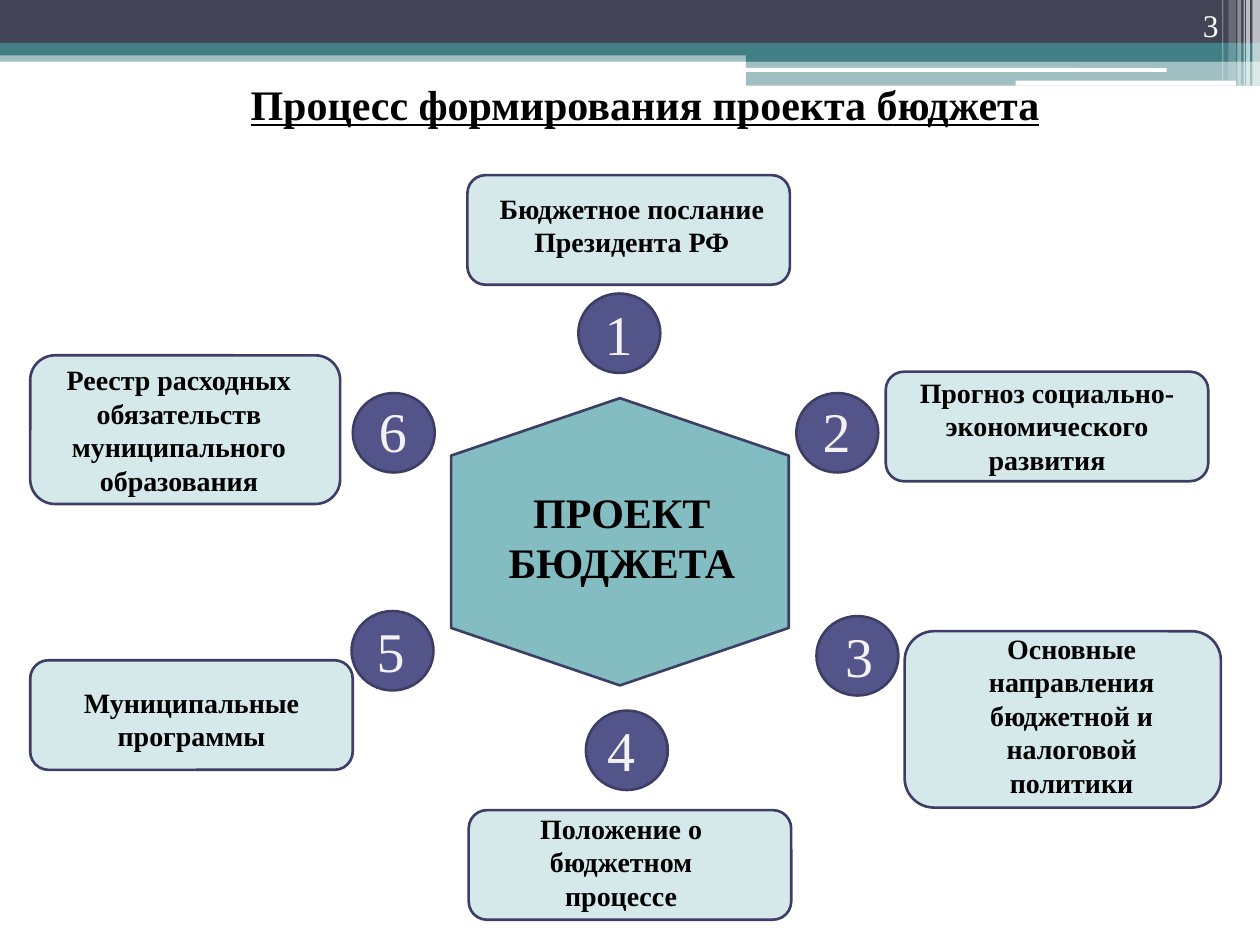
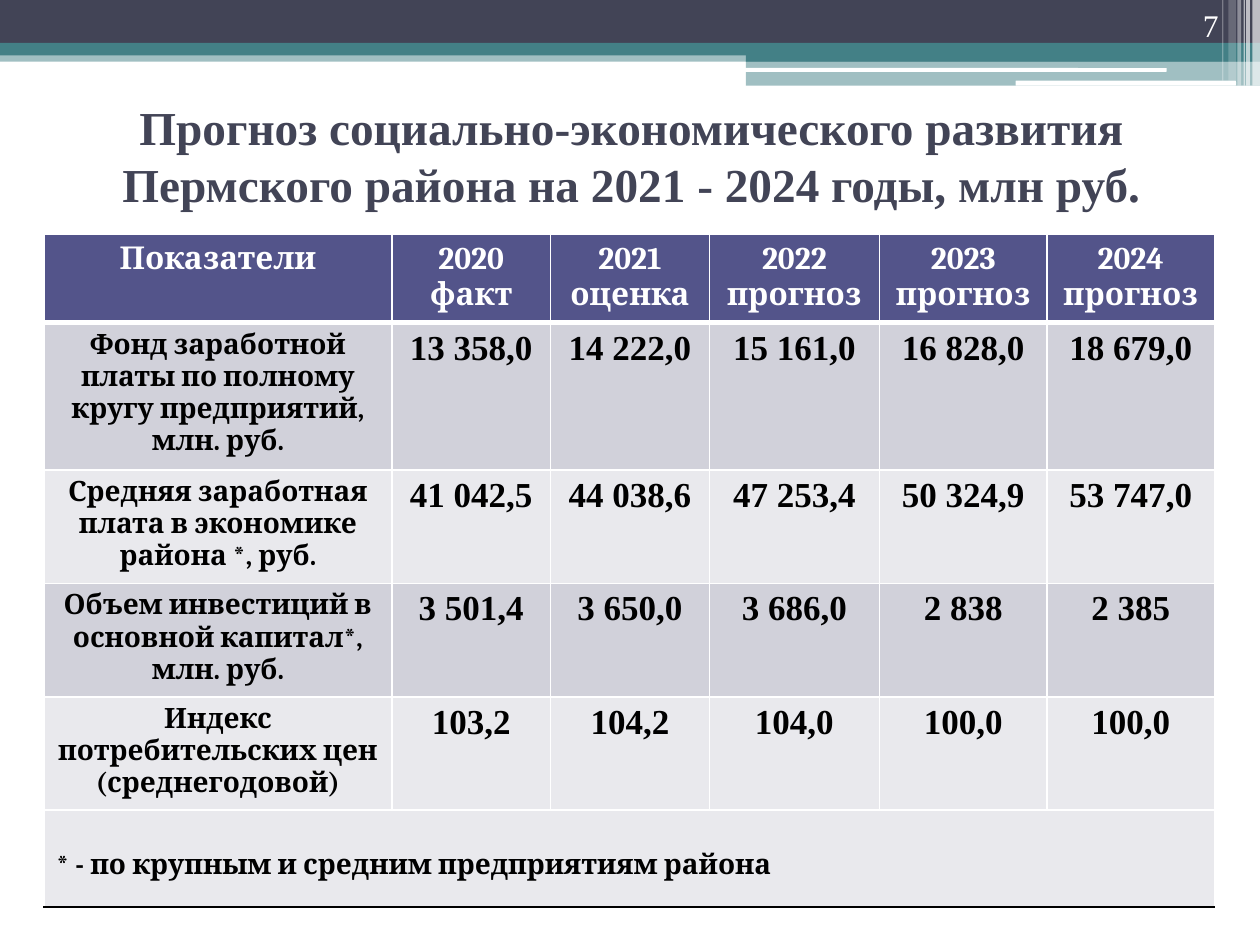
from lxml import etree
from pptx import Presentation
from pptx.dml.color import RGBColor
from pptx.enum.shapes import MSO_SHAPE
from pptx.enum.text import MSO_ANCHOR, PP_ALIGN
from pptx.oxml.ns import qn
from pptx.util import Inches, Pt

COLORS = {
    "white": "FFFFFF", "black": "000000", "slate": "424456", "teal": "438086",
    "hexagon": "83BCC1", "card": "D6E9EA", "indigo": "53548A", "outline": "3D3E66",
    "digit": "F2F2F2", "band_dark": "D1D1DA", "band_light": "E9E9ED",
}
SERIF, TABLE_FONT = "Times New Roman", "Cambria"

# left, top, width, height, colour, opacity in percent
BANDS = [
    (0, 0.4, 10, 0.09, "teal", 50),
    (0, 0, 10, 0.34, "slate", 100),
    (0, 0.34, 10, 0.1, "teal", 100),
    (5.92, 0.39, 4.08, 0.1, "teal", 100),
    (5.92, 0.48, 4.08, 0.2, "teal", 50),
]
WHITE_BARS = [(5.91, 0.54, 3.35, 0.03), (8.06, 0.64, 1.75, 0.04)]
# left, width, height, opacity in percent
STRIPES = [
    (9.94, 0.06, 0.68, 65), (9.89, 0.03, 0.68, 65), (9.87, 0.01, 0.68, 60),
    (9.82, 0.03, 0.68, 40), (9.75, 0.06, 0.64, 20), (9.7, 0.01, 0.64, 30),
]

# circle left and top, digit left and top
STEPS = [
    ("1", (4.59, 2.33), (4.7, 2.33)),
    ("2", (6.32, 3.12), (6.43, 3.1)),
    ("3", (6.48, 4.89), (6.61, 4.88)),
    ("4", (4.65, 5.64), (4.72, 5.63)),
    ("5", (2.79, 4.85), (2.89, 4.84)),
    ("6", (2.8, 3.12), (2.91, 3.1)),
]
# card frame, text frame
CARDS = [
    ("Бюджетное послание Президента РФ",
     (3.71, 1.39, 2.56, 0.87), (3.8, 1.47, 2.43, 0.64)),
    ("Прогноз социально-экономического развития",
     (7.03, 2.95, 2.56, 0.87), (7.17, 2.93, 2.28, 0.91)),
    ("Основные направления бюджетной и налоговой политики",
     (7.18, 5.01, 2.51, 1.4), (7.43, 4.96, 2.15, 1.45)),
    ("Положение о бюджетном процессе",
     (3.72, 6.43, 2.56, 0.87), (3.83, 6.39, 2.2, 0.91)),
    ("Муниципальные программы",
     (0.24, 5.24, 2.56, 0.87), (0.4, 5.39, 2.24, 0.64)),
    ("Реестр расходных обязательств муниципального образования",
     (0.24, 2.82, 2.46, 1.18), (0.24, 2.83, 2.36, 1.18)),
]

HEADER = ["Показатели", "2020 факт", "2021 оценка", "2022 прогноз",
          "2023 прогноз", "2024 прогноз"]
INDICATORS = [
    ["Фонд заработной платы по полному кругу предприятий,\nмлн. руб.",
     "13 358,0", "14 222,0", "15 161,0", "16 828,0", "18 679,0"],
    ["Средняя заработная плата в экономике района *, руб.",
     "41 042,5", "44 038,6", "47 253,4", "50 324,9", "53 747,0"],
    ["Объем инвестиций в основной капитал*, млн. руб.",
     "3 501,4", "3 650,0", "3 686,0", "2 838", "2 385"],
    ["Индекс потребительских цен (среднегодовой)",
     "103,2", "104,2", "104,0", "100,0", "100,0"],
]
FOOTNOTE = "* - по крупным и средним предприятиям района"
COLUMN_WIDTHS = [2.76, 1.26, 1.26, 1.35, 1.33, 1.33]
ROW_HEIGHTS = [0.7, 1.17, 0.9, 0.9, 0.9, 0.77]


def rgb(name):
    return RGBColor.from_string(COLORS[name])


def write(tf, text, size=16, font=SERIF, color="black", bold=False,
          underline=False, align=PP_ALIGN.CENTER):
    """Fill a text frame, one paragraph per line of text."""
    for i, line in enumerate(text.split("\n")):
        p = tf.add_paragraph() if i else tf.paragraphs[0]
        p.alignment = align
        r = p.add_run()
        r.text = line
        r.font.size, r.font.name = Pt(size), font
        r.font.bold, r.font.underline = bold, underline
        r.font.color.rgb = rgb(color)


def set_borders(cell, top=1, bottom=1, bottom_color="white"):
    tc_pr = cell._tc.get_or_add_tcPr()
    sides = [("a:lnL", 1, "white"), ("a:lnR", 1, "white"),
             ("a:lnT", top, "white"), ("a:lnB", bottom, bottom_color)]
    for tag, width, color in sides:
        ln = etree.SubElement(tc_pr, qn(tag), w=str(Pt(width)))
        fill = etree.SubElement(ln, qn("a:solidFill"))
        etree.SubElement(fill, qn("a:srgbClr"), val=COLORS[color])


class Deck:
    def __init__(self):
        self.prs = Presentation()
        self.prs.slide_width, self.prs.slide_height = Inches(10), Inches(7.5)
        self.s = None

    def new_slide(self, number):
        """Start a slide with the shared bands and its page number."""
        self.s = self.prs.slides.add_slide(self.prs.slide_layouts[6])
        for *box, color, opacity in BANDS:
            self.shape(MSO_SHAPE.RECTANGLE, box, color, opacity=opacity)
        for box in WHITE_BARS:
            self.shape(MSO_SHAPE.ROUNDED_RECTANGLE, box, "white")
        for left, width, height, opacity in STRIPES:
            self.shape(MSO_SHAPE.RECTANGLE, (left, 0, width, height), "white",
                       opacity=opacity)
        self.text((8.94, 0, 0.83, 0.4), str(number), anchor=MSO_ANCHOR.BOTTOM,
                  size=18, color="white", align=PP_ALIGN.RIGHT)

    def shape(self, kind, box, fill, line=None, opacity=100):
        sp = self.s.shapes.add_shape(kind, *map(Inches, box))
        sp.shadow.inherit = False
        sp.fill.solid()
        sp.fill.fore_color.rgb = rgb(fill)
        if opacity < 100:
            clr = sp._element.spPr.find(".//" + qn("a:srgbClr"))
            etree.SubElement(clr, qn("a:alpha"), val=str(opacity * 1000))
        if line:
            sp.line.color.rgb = rgb(line)
            sp.line.width = Pt(1.5)
        else:
            sp.line.fill.background()
        return sp

    def text(self, box, text, anchor=MSO_ANCHOR.TOP, **style):
        tf = self.s.shapes.add_textbox(*map(Inches, box)).text_frame
        tf.word_wrap = True
        tf.vertical_anchor = anchor
        write(tf, text, **style)

    def title(self, box, text, **style):
        self.text(box, text, anchor=MSO_ANCHOR.MIDDLE, bold=True, **style)

    def step(self, digit, circle, label):
        self.shape(MSO_SHAPE.OVAL, (*circle, 0.65, 0.63), "indigo", "outline")
        self.text((*label, 0.43, 0.64), digit, size=32, color="digit",
                  align=PP_ALIGN.LEFT)

    def card(self, text, frame, label):
        self.shape(MSO_SHAPE.ROUNDED_RECTANGLE, frame, "card", "outline")
        self.text(label, text, bold=True)

    def cell(self, cell, fill, text="", borders=None, **style):
        set_borders(cell, **(borders or {}))
        cell.fill.solid()
        cell.fill.fore_color.rgb = rgb(fill)
        if text:
            write(cell.text_frame, text, bold=True, **style)

    def indicator_table(self, left, top):
        size = Inches(sum(COLUMN_WIDTHS)), Inches(sum(ROW_HEIGHTS))
        table = self.s.shapes.add_table(
            len(ROW_HEIGHTS), len(COLUMN_WIDTHS),
            Inches(left), Inches(top), *size).table
        for column, width in zip(table.columns, COLUMN_WIDTHS):
            column.width = Inches(width)
        for row, height in zip(table.rows, ROW_HEIGHTS):
            row.height = Inches(height)

        for c, text in enumerate(HEADER):
            self.cell(table.cell(0, c), "indigo", text, {"bottom": 3},
                      size=18, font=TABLE_FONT, color="white")
        for r, values in enumerate(INDICATORS, 1):
            for c, text in enumerate(values):
                style = {"size": 20} if c else {"font": TABLE_FONT}
                self.cell(table.cell(r, c), "band_dark" if r % 2 else "band_light",
                          text, {"top": 3 if r == 1 else 1}, **style)

        last = len(ROW_HEIGHTS) - 1
        note = table.cell(last, 0)
        note.merge(table.cell(last, len(COLUMN_WIDTHS) - 1))
        for c in range(len(COLUMN_WIDTHS)):
            self.cell(table.cell(last, c), "band_light", "" if c else FOOTNOTE,
                      {"bottom_color": "black"}, font=TABLE_FONT,
                      align=PP_ALIGN.LEFT)
        note.margin_top = Inches(0.31)


def add_process_slide(deck):
    deck.new_slide(3)
    deck.title((1.2, 0.2, 7.84, 1.24), "Процесс формирования проекта бюджета",
               size=24, underline=True)
    hexagon = deck.shape(MSO_SHAPE.FLOWCHART_PREPARATION,
                         (3.78, 2.96, 2.28, 2.68), "hexagon", "outline")
    hexagon.rotation = 90
    deck.text((3.93, 3.81, 2.01, 0.91), "ПРОЕКТ БЮДЖЕТА", size=24, bold=True)
    for step in STEPS:
        deck.step(*step)
    for card in CARDS:
        deck.card(*card)


def add_forecast_slide(deck):
    deck.new_slide(7)
    deck.title((0.51, 0.76, 9, 0.94),
               "Прогноз социально-экономического развития "
               "Пермского района на 2021 - 2024 годы, млн руб.",
               size=27, color="slate")
    deck.indicator_table(0.35, 1.86)


def main():
    deck = Deck()
    add_process_slide(deck)
    add_forecast_slide(deck)
    deck.prs.save("out.pptx")


if __name__ == "__main__":
    main()
